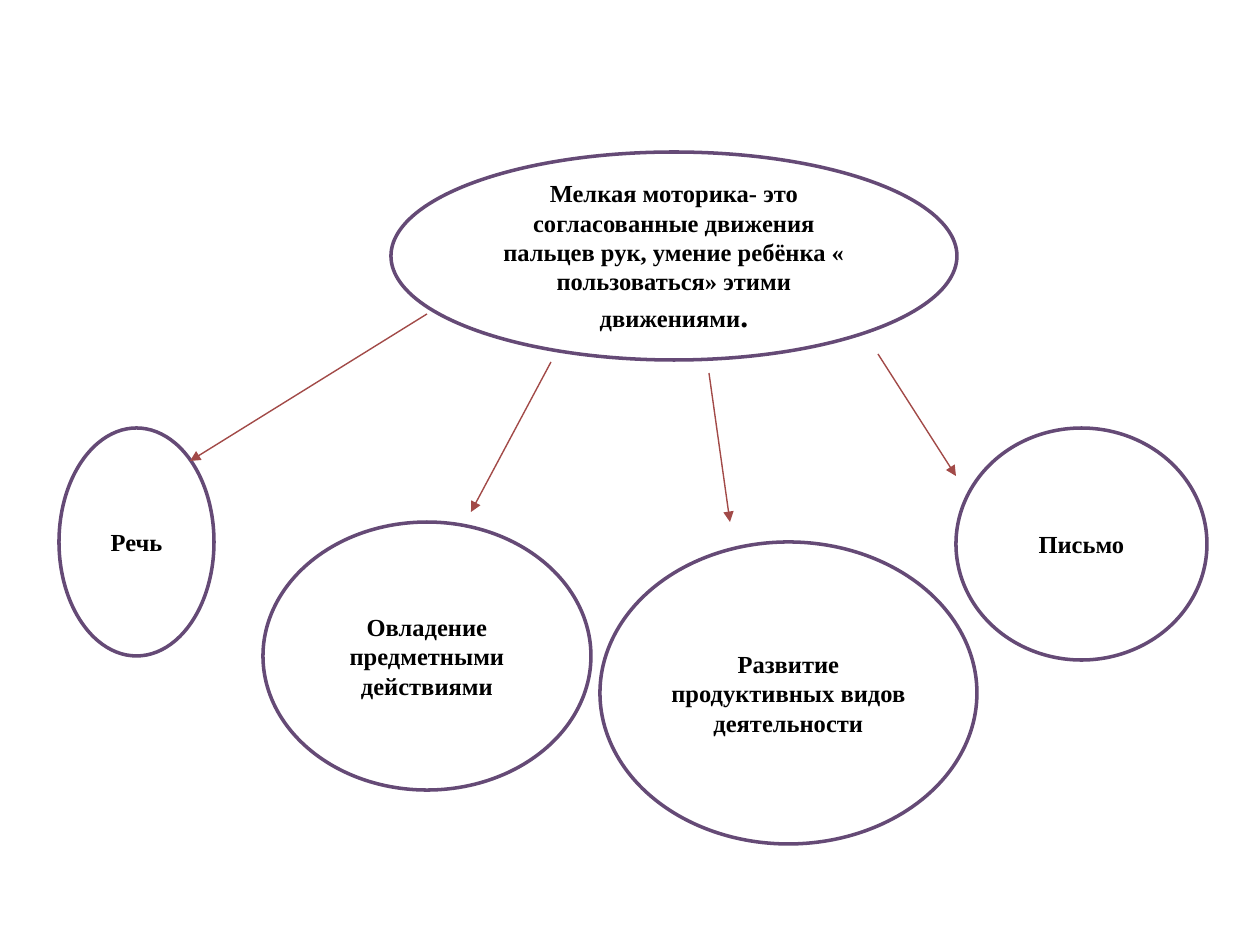
"""Build a slide showing what fine motor skills lead to."""
from lxml import etree
from pptx import Presentation
from pptx import util as u
from pptx.dml.color import RGBColor
from pptx.enum import shapes, text
from pptx.oxml.ns import qn

SCALE = u.Inches(1) / 126
COLORS = {"paper": "FFFFFF", "outline": "654A76", "arrow": "A24A48", "ink": "000000"}


def px(*lengths):
    return [u.Emu(round(length * SCALE)) for length in lengths]


def color(name):
    return RGBColor.from_string(COLORS[name])


presentation = Presentation()
presentation.slide_width, presentation.slide_height = px(1260, 945)
slide = presentation.slides.add_slide(presentation.slide_layouts[6])

definition = ("Мелкая моторика- это согласованные движения пальцев рук, "
              "умение ребёнка « пользоваться» этими движениями")
ellipses = [
    ((391, 152, 566, 208), [[(definition, 14), (".", 18)]]),
    ((59, 428, 155, 228), [[("Речь", 14)]]),
    ((263, 522, 328, 268), [[("Овладение", 14)], [("предметными действиями", 14)]]),
    ((600, 542, 377, 302), [[("Развитие продуктивных видов деятельности", 14)]]),
    ((956, 428, 251, 232), [[("Письмо", 14)]]),
]
for box, paragraphs in ellipses:
    shape = slide.shapes.add_shape(shapes.MSO_SHAPE.OVAL, *px(*box))
    shape.shadow.inherit = False
    shape.fill.solid()
    shape.fill.fore_color.rgb = color("paper")
    shape.line.color.rgb = color("outline")
    shape.line.width = u.Pt(2)
    frame = shape.text_frame
    frame.word_wrap = True
    frame.vertical_anchor = text.MSO_ANCHOR.MIDDLE
    frame.text = "\n".join("".join(words for words, size in runs) for runs in paragraphs)
    for paragraph, runs in zip(frame.paragraphs, paragraphs):
        paragraph.text = ""
        paragraph.alignment = text.PP_ALIGN.CENTER
        for words, size in runs:
            run = paragraph.add_run()
            run.text = words
            run.font.name = "Times New Roman"
            run.font.size = u.Pt(size)
            run.font.bold = True
            run.font.color.rgb = color("ink")

arrows = [
    (427, 314, 190, 461),
    (551, 362, 471, 512),
    (709, 373, 730, 522),
    (878, 354, 956, 476),
]
for ends in arrows:
    arrow = slide.shapes.add_connector(shapes.MSO_CONNECTOR.STRAIGHT, *px(*ends))
    arrow.line.color.rgb = color("arrow")
    arrow.line.width = u.Pt(0.79)
    properties = arrow.element.spPr
    etree.SubElement(properties.find(qn("a:ln")), qn("a:tailEnd"), type="triangle")
    etree.SubElement(properties, qn("a:effectLst"))

presentation.save("out.pptx")
